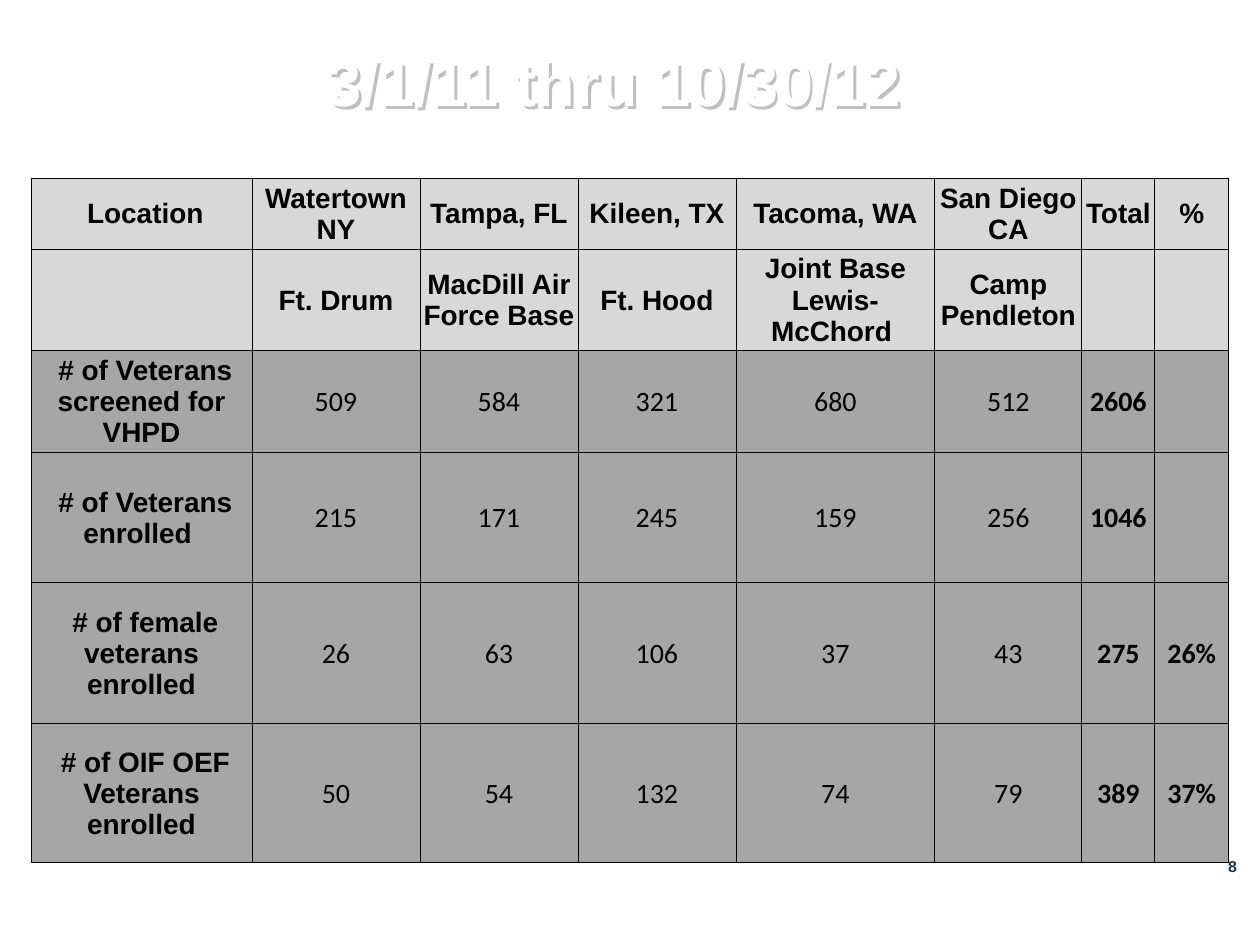
from lxml.etree import SubElement
from pptx import Presentation
from pptx.dml.color import RGBColor
from pptx.enum.text import MSO_ANCHOR, PP_ALIGN
from pptx.oxml import parse_xml
from pptx.oxml.ns import nsdecls, qn
from pptx.util import Pt

PX = 914400 // 126

# Content
TITLE = "3/1/11 thru 10/30/12"
PAGE_NUMBER = "8"
HEADER_ROWS = [
    [" Location", "Watertown NY", "Tampa, FL", "Kileen, TX", "Tacoma, WA",
     "San Diego CA", "Total", "%"],
    ["", "Ft. Drum", "MacDill Air Force Base", "Ft. Hood",
     "Joint Base Lewis-McChord ", "Camp Pendleton", "", ""],
]
COUNT_ROWS = [
    [" # of Veterans screened for VHPD", "509", "584", "321", "680", "512", "2606", ""],
    [" # of Veterans enrolled ", "215", "171", "245", "159", "256", "1046", ""],
    [" # of female veterans enrolled", "26", "63", "106", "37", "43", "275", "26%"],
    [" # of OIF OEF Veterans enrolled", "50", "54", "132", "74", "79", "389", "37%"],
]
TOTAL_COLUMN = 6

# Layout in px
COLUMN_WIDTHS = [221, 168, 158, 158, 199, 147, 73, 74]
ROW_HEIGHTS = [71, 100, 99, 130, 141, 139]
TABLE_LEFT, TABLE_TOP = 31, 178
TITLE_BOX = (42, 32, 1144, 98)
NUMBER_BOX = (987, 856, 250, 21)

# Formats
TITLE_FONT = {"name": "Arial", "size": Pt(36), "bold": True}
NUMBER_FONT = {"name": "Arial", "size": Pt(9), "bold": True}
LABEL_FONT = {"name": "Arial", "size": Pt(16), "bold": True}
COUNT_FONT = {"name": "Calibri", "size": Pt(16), "bold": False}
TOTAL_FONT = COUNT_FONT | {"bold": True}
CELL_FORMAT = {"vertical_anchor": MSO_ANCHOR.MIDDLE, "margin_left": PX,
               "margin_right": PX, "margin_top": PX, "margin_bottom": 0}
FRAME_FORMAT = {"word_wrap": True, "vertical_anchor": MSO_ANCHOR.MIDDLE,
                "margin_left": 0, "margin_right": 0,
                "margin_top": 0, "margin_bottom": 0}


def rgb(color):
    return RGBColor.from_string(color)


def scale(box):
    return [length * PX for length in box]


def set_format(target, values):
    for attribute, value in values.items():
        setattr(target, attribute, value)


def write(frame, text, font, color, align):
    paragraph = frame.paragraphs[0]
    paragraph.alignment = align
    run = paragraph.add_run()
    run.text = text
    set_format(run.font, font)
    run.font.color.rgb = rgb(color)


def add_borders(cell, color):
    properties = cell._tc.get_or_add_tcPr()
    for side in ("lnL", "lnR", "lnT", "lnB"):
        line = SubElement(properties, qn(f"a:{side}"), w=str(Pt(0.5)))
        fill = SubElement(line, qn("a:solidFill"))
        SubElement(fill, qn("a:srgbClr"), val=color)


def add_shadow(shape, color):
    """An unfilled shape casts its shadow from the text."""
    shape.fill.background()
    shape._element.spPr.append(parse_xml(
        f'<a:effectLst {nsdecls("a")}><a:outerShdw dist="{4 * PX}" dir="2700000" '
        f'algn="tl"><a:srgbClr val="{color}"/></a:outerShdw></a:effectLst>'))


def font_for(row, column):
    if row < len(HEADER_ROWS) or column == 0:
        return LABEL_FONT
    return TOTAL_FONT if column >= TOTAL_COLUMN else COUNT_FONT


presentation = Presentation()
presentation.slide_width, presentation.slide_height = scale((1260, 945))
slide = presentation.slides.add_slide(presentation.slide_layouts[5])

# Page number
number = slide.shapes.add_textbox(*scale(NUMBER_BOX))
set_format(number.text_frame, FRAME_FORMAT)
write(number.text_frame, PAGE_NUMBER, NUMBER_FONT, "113253", PP_ALIGN.RIGHT)

# Table of sites and counts
rows = HEADER_ROWS + COUNT_ROWS
table = slide.shapes.add_table(
    len(rows), len(COLUMN_WIDTHS),
    *scale((TABLE_LEFT, TABLE_TOP, sum(COLUMN_WIDTHS), sum(ROW_HEIGHTS)))).table
for column, width in zip(table.columns, COLUMN_WIDTHS):
    column.width = width * PX
for row, height in zip(table.rows, ROW_HEIGHTS):
    row.height = height * PX
for r, texts in enumerate(rows):
    for c, text in enumerate(texts):
        cell = table.cell(r, c)
        set_format(cell, CELL_FORMAT)
        add_borders(cell, "000000")
        cell.fill.solid()
        cell.fill.fore_color.rgb = rgb("D8D8D8" if r < len(HEADER_ROWS) else "A6A6A6")
        if text:
            write(cell.text_frame, text, font_for(r, c), "000000", PP_ALIGN.CENTER)

# Title
title = slide.shapes.title
title.left, title.top, title.width, title.height = scale(TITLE_BOX)
set_format(title.text_frame, FRAME_FORMAT)
write(title.text_frame, TITLE, TITLE_FONT, "FFFFFF", PP_ALIGN.CENTER)
add_shadow(title, "C0C0C0")

presentation.save("out.pptx")
